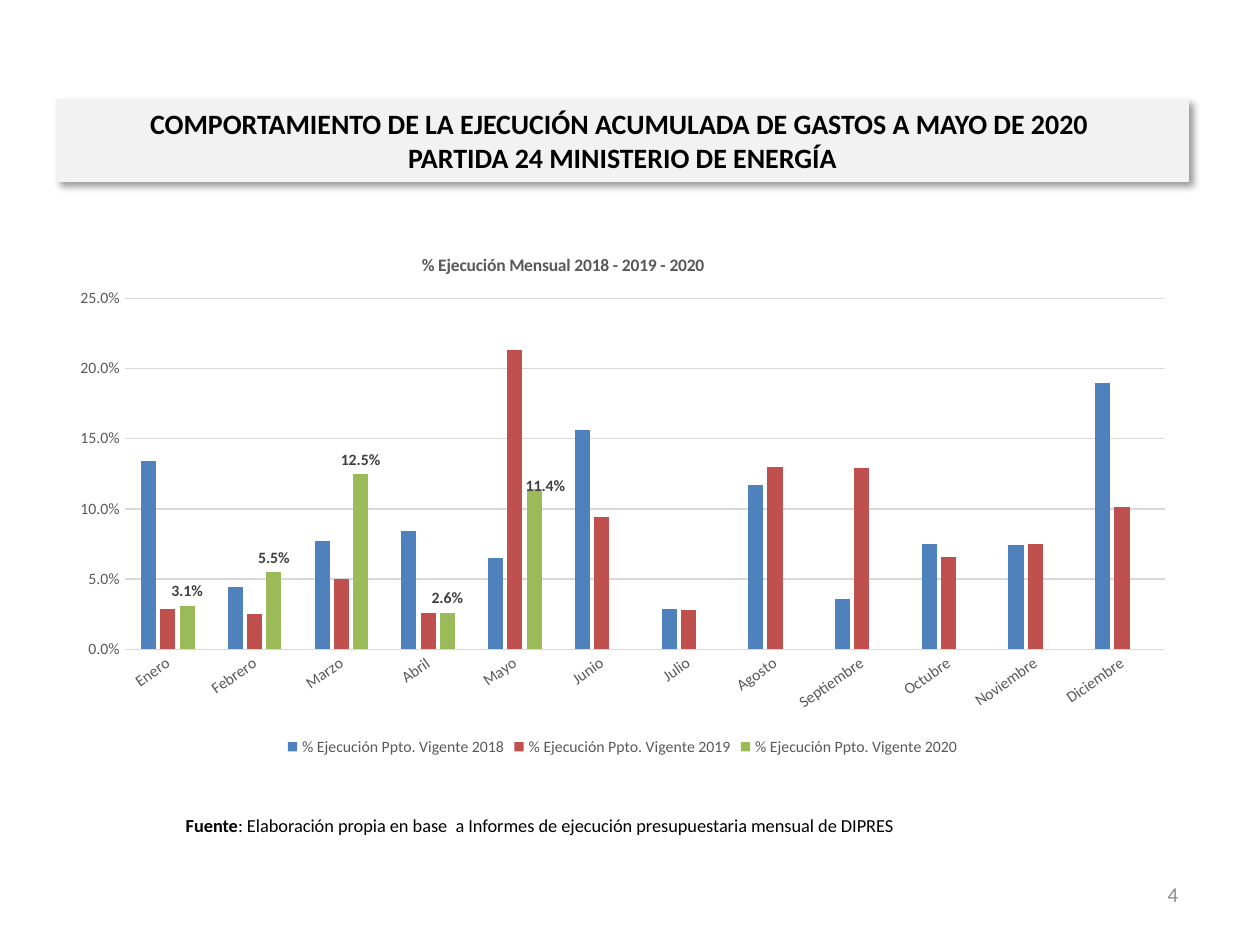
from dataclasses import dataclass

from lxml import etree
from pptx import Presentation
from pptx.chart.data import CategoryChartData
from pptx.dml.color import RGBColor
from pptx.enum import chart as ch, text
from pptx.oxml import ns
from pptx.util import Inches, Pt


@dataclass(frozen=True)
class Theme:
    """Colours, type sizes and font of the slide."""
    font: str = "Calibri"
    ink: str = "000000"
    panel: str = "F2F2F2"
    muted: str = "595959"
    label: str = "404040"
    grid: str = "D9D9D9"
    number: str = "8C8C8C"
    series: tuple = ("4F81BD", "C0504D", "9BBB59")
    title_size: float = 16
    source_size: float = 10.5
    number_size: float = 12
    chart_size: float = 10
    axis_size: float = 9


T = Theme()
PERCENT = "0.0%"
MONTHS = ("Enero", "Febrero", "Marzo", "Abril", "Mayo", "Junio", "Julio", "Agosto",
          "Septiembre", "Octubre", "Noviembre", "Diciembre")
EXECUTION = {
    2018: (0.134, 0.044, 0.077, 0.084, 0.065, 0.156, 0.029, 0.117, 0.036, 0.075, 0.074, 0.19),
    2019: (0.029, 0.025, 0.05, 0.026, 0.213, 0.094, 0.028, 0.13, 0.129, 0.066, 0.075, 0.101),
    2020: (0.031, 0.055, 0.125, 0.026, 0.114) + (None,) * 7,
}


def rgb(color):
    """Turn a hex string into a colour."""
    return RGBColor.from_string(color)


def set_font(font, size, color, bold=False):
    """Format a font with the theme's typeface."""
    font.name, font.size, font.bold = T.font, Pt(size), bold
    font.color.rgb = rgb(color)


def add_run(p, words, *, size, color=T.ink, bold=False):
    """Add formatted text to a paragraph."""
    r = p.add_run()
    r.text = words
    set_font(r.font, size, color, bold)


def add_element(parent, tag, **attrs):
    """Append an XML element with the given attributes."""
    return etree.SubElement(parent, ns.qn(tag), {k: str(v) for k, v in attrs.items()})


def set_layout(parent, index, **values):
    """Give a chart part a manual layout."""
    for old in parent.findall(ns.qn("c:layout")):
        parent.remove(old)
    layout = etree.Element(ns.qn("c:layout"))
    manual = add_element(layout, "c:manualLayout")
    for name, value in values.items():
        add_element(manual, f"c:{name}", val=value)
    parent.insert(index, layout)


def add_title(s, box):
    """Place the shaded title panel."""
    sp = s.shapes.title
    sp.left, sp.top, sp.width, sp.height = box
    sp.fill.solid()
    sp.fill.fore_color.rgb = rgb(T.panel)
    sp.line.color.rgb = rgb(T.panel)
    sp.line.width = Pt(0.75)
    effects = add_element(sp._element.spPr, "a:effectLst")
    shadow = add_element(effects, "a:outerShdw", blurRad=Pt(4), dist=Pt(3),
                         dir=45 * 60000, algn="tl", rotWithShape=0)
    color = add_element(shadow, "a:srgbClr", val=T.ink)
    add_element(color, "a:alpha", val=40000)
    tf = sp.text_frame
    tf.auto_size = text.MSO_AUTO_SIZE.NONE
    tf.vertical_anchor = text.MSO_ANCHOR.MIDDLE
    p = tf.paragraphs[0]
    p.alignment = text.PP_ALIGN.CENTER
    add_run(p, "COMPORTAMIENTO DE LA EJECUCIÓN ACUMULADA DE GASTOS A MAYO DE 2020 ",
            size=T.title_size, bold=True)
    p.add_line_break()
    add_run(p, "PARTIDA 24 MINISTERIO DE ENERGÍA", size=T.title_size, bold=True)


def add_line(s, box, align):
    """Add a one-line text box and return its paragraph."""
    tf = s.shapes.add_textbox(*box).text_frame
    tf.word_wrap = True
    tf.vertical_anchor = text.MSO_ANCHOR.MIDDLE
    p = tf.paragraphs[0]
    p.alignment = align
    return p


def add_source(s, box):
    """Place the source note."""
    p = add_line(s, box, text.PP_ALIGN.CENTER)
    add_run(p, "Fuente", size=T.source_size, bold=True)
    add_run(p, ": Elaboración propia en base  a Informes de ejecución presupuestaria "
            "mensual de DIPRES", size=T.source_size)


def add_number(s, box):
    """Place the page number."""
    p = add_line(s, box, text.PP_ALIGN.RIGHT)
    add_run(p, "4", size=T.number_size, color=T.number)


def format_axes(chart):
    """Format both axes and the gridlines."""
    cat, val = chart.category_axis, chart.value_axis
    for axis in (cat, val):
        axis.major_tick_mark = axis.minor_tick_mark = ch.XL_TICK_MARK.NONE
        set_font(axis.tick_labels.font, T.axis_size, T.muted)
    for line in (cat.format.line, val.major_gridlines.format.line):
        line.color.rgb = rgb(T.grid)
        line.width = Pt(0.75)
    cat._element.txPr.bodyPr.set("rot", str(-35 * 60000))
    val.format.line.fill.background()
    val.minimum_scale, val.maximum_scale, val.major_unit = 0, 0.25, 0.05
    val.tick_labels.number_format = PERCENT
    val.tick_labels.number_format_is_linked = False


def label_series(series, moved):
    """Label a series, shifting the label of one point."""
    labels = series.data_labels
    labels.show_value = True
    labels.number_format = PERCENT
    labels.number_format_is_linked = False
    labels.position = ch.XL_LABEL_POSITION.OUTSIDE_END
    set_font(labels.font, T.axis_size, T.label, True)
    label = series.points[moved].data_label
    set_font(label.font, T.axis_size, T.label, True)
    label.position = ch.XL_LABEL_POSITION.OUTSIDE_END
    item = labels._element.find(ns.qn("c:dLbl"))
    set_layout(item, 1, x=0.01, y=0.02)


def add_execution_chart(s, box):
    """Place the monthly execution column chart."""
    data = CategoryChartData(number_format=PERCENT)
    data.categories = MONTHS
    for year, values in EXECUTION.items():
        data.add_series(f"% Ejecución Ppto. Vigente {year}", values)
    chart = s.shapes.add_chart(ch.XL_CHART_TYPE.COLUMN_CLUSTERED, *box, data).chart
    set_font(chart.font, T.chart_size, T.ink)
    p = chart.chart_title.text_frame.paragraphs[0]
    add_run(p, "% Ejecución Mensual 2018 - 2019 - 2020",
            size=T.chart_size, color=T.muted, bold=True)
    set_layout(chart.chart_title._element, 1, xMode="edge", yMode="edge", x=0.32, y=0.04)
    plot = chart.plots[0]
    plot.gap_width, plot.overlap, plot.vary_by_categories = 219, -27, False
    set_layout(plot._element.getparent(), 0, layoutTarget="inner", xMode="edge",
               yMode="edge", x=0.06, y=0.13, w=0.92, h=0.66)
    for series, color in zip(plot.series, T.series):
        series.format.fill.solid()
        series.format.fill.fore_color.rgb = rgb(color)
    label_series(plot.series[2], MONTHS.index("Mayo"))
    format_axes(chart)
    chart.has_legend = True
    chart.legend.position = ch.XL_LEGEND_POSITION.BOTTOM
    chart.legend.include_in_layout = False
    set_font(chart.legend.font, T.axis_size, T.muted)


def main():
    """Build and save the slide."""
    prs = Presentation()
    prs.slide_width, prs.slide_height = Inches(10), Inches(7.5)
    s = prs.slides.add_slide(prs.slide_layouts[5])
    left, width = Inches(0.45), Inches(8.98)
    add_title(s, (left, Inches(0.79), width, Inches(0.65)))
    add_execution_chart(s, (left, Inches(1.82), width, Inches(4.22)))
    add_source(s, (left, Inches(6.35), Inches(7.67), Inches(0.4)))
    add_number(s, (Inches(7.12), Inches(6.9), Inches(2.33), Inches(0.4)))
    prs.save("out.pptx")


if __name__ == "__main__":
    main()
